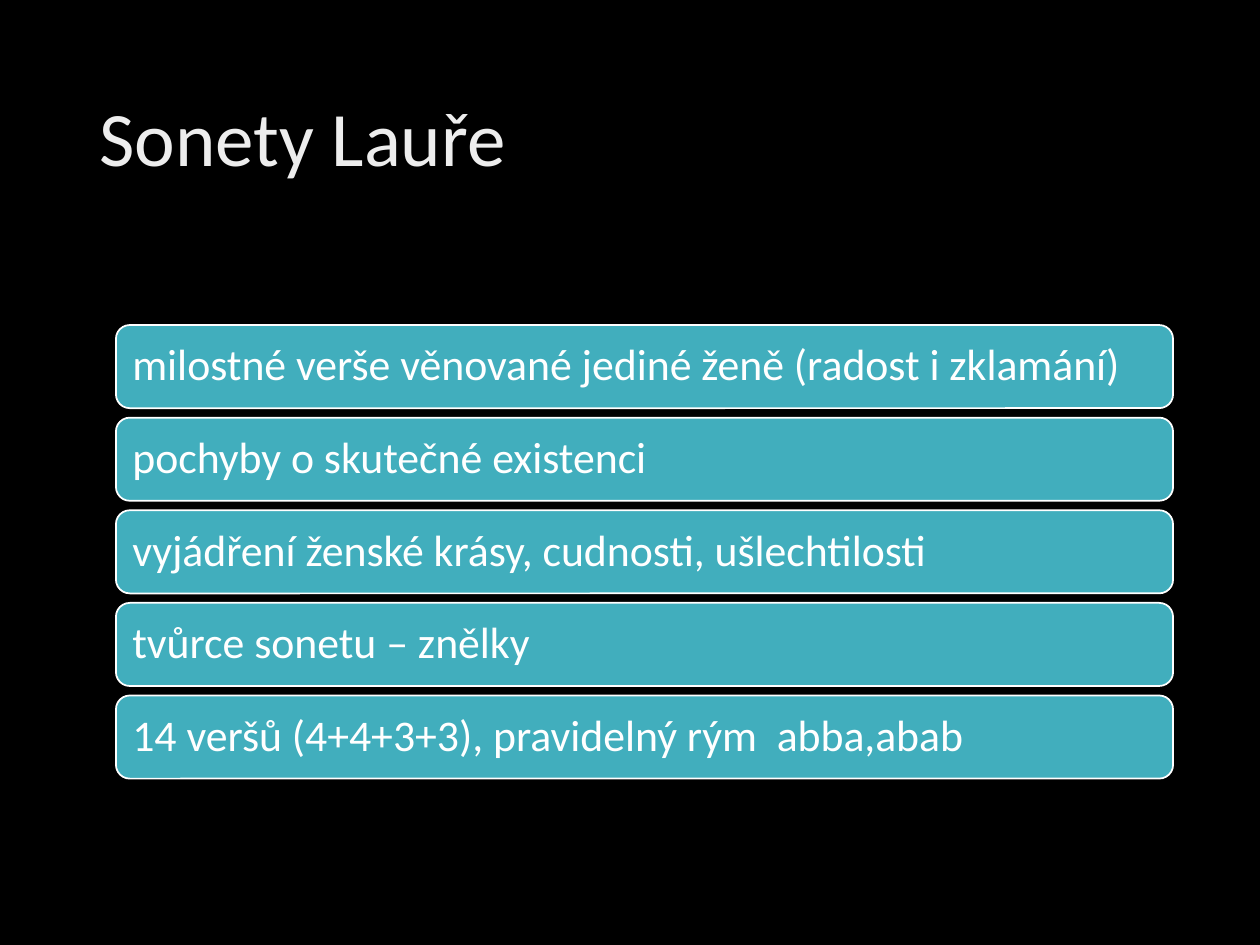
"""Build the slide "Sonety Lauře": a title above five rounded bars of text."""
from pptx import Presentation
from pptx.dml.color import RGBColor
from pptx.enum.shapes import MSO_SHAPE as Shape
from pptx.enum.text import MSO_ANCHOR as Anchor, PP_ALIGN as Align
from pptx.util import Inches, Pt

BLACK = RGBColor(0x00, 0x00, 0x00)
WHITE = RGBColor(0xFF, 0xFF, 0xFF)
PALE_GREY = RGBColor(0xED, 0xED, 0xED)
TEAL = RGBColor(0x41, 0xAE, 0xBD)

FEATURES = [
    "milostné verše věnované jediné ženě (radost i zklamání)",
    "pochyby o skutečné existenci",
    "vyjádření ženské krásy, cudnosti, ušlechtilosti",
    "tvůrce sonetu – znělky",
    "14 veršů (4+4+3+3), pravidelný rým  abba,abab",
]
FIRST_TOP, LAST_TOP = Inches(2.58), Inches(5.52)
PITCH = (LAST_TOP - FIRST_TOP) // (len(FEATURES) - 1)


def write(holder, text, *, size, color, inset_y):
    frame = holder.text_frame
    frame.word_wrap = True
    frame.vertical_anchor = Anchor.MIDDLE
    frame.margin_left = frame.margin_right = Inches(0.1)
    frame.margin_top = frame.margin_bottom = Inches(inset_y)
    paragraph = frame.paragraphs[0]
    paragraph.alignment = Align.LEFT
    paragraph.line_spacing = 0.9
    run = paragraph.add_run()
    run.text = text
    run.font.name = "Calibri"
    run.font.size = Pt(size)
    run.font.color.rgb = color


prs = Presentation()
prs.slide_width, prs.slide_height = Inches(10), Inches(7.5)
slide = prs.slides.add_slide(prs.slide_layouts[5])
slide.background.fill.solid()
slide.background.fill.fore_color.rgb = BLACK

title = slide.shapes.title
title.left, title.top = Inches(0.69), Inches(0.4)
title.width, title.height = Inches(8.62), Inches(1.45)
write(title, "Sonety Lauře", size=44, color=PALE_GREY, inset_y=0.05)

for row, feature in enumerate(FEATURES):
    bar = slide.shapes.add_shape(
        Shape.ROUNDED_RECTANGLE,
        Inches(0.92), FIRST_TOP + row * PITCH, Inches(8.39), Inches(0.66),
    )
    bar.shadow.inherit = False
    bar.fill.solid()
    bar.fill.fore_color.rgb = TEAL
    bar.line.color.rgb = WHITE
    bar.line.width = Pt(1)
    write(bar, feature, size=25, color=WHITE, inset_y=0.1)

prs.save("out.pptx")
